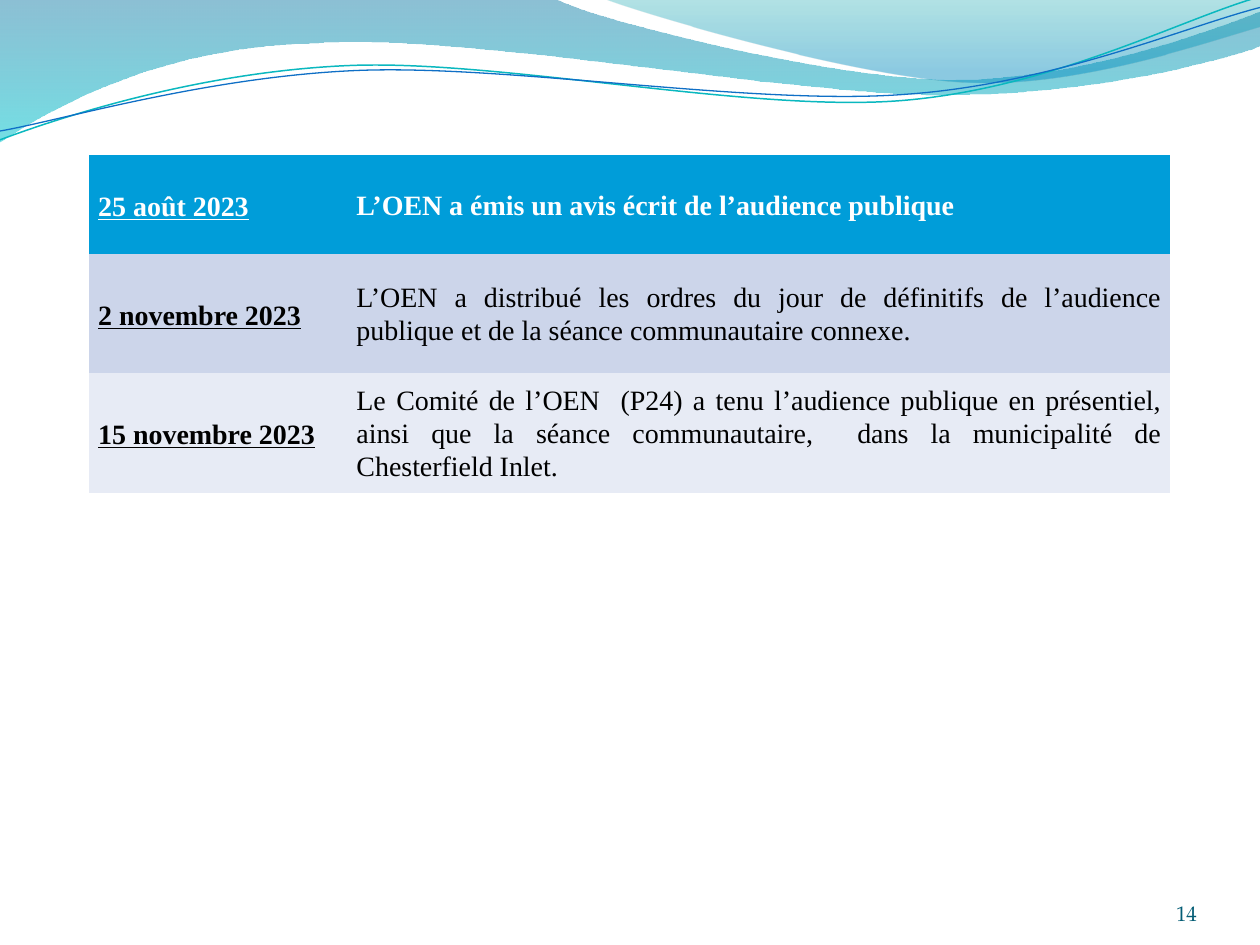
from dataclasses import dataclass
from math import cos, radians, sin

from lxml import etree
from pptx import Presentation
from pptx.dml.color import RGBColor
from pptx.enum.text import MSO_ANCHOR, PP_ALIGN
from pptx.oxml.ns import qn
from pptx.util import Inches, Pt

LEFT, RIGHT, JUSTIFY = PP_ALIGN.LEFT, PP_ALIGN.RIGHT, PP_ALIGN.JUSTIFY
MIDDLE, BOTTOM = MSO_ANCHOR.MIDDLE, MSO_ANCHOR.BOTTOM

WHITE = RGBColor(0xFF, 0xFF, 0xFF)
BLACK = RGBColor(0x00, 0x00, 0x00)
HEADER_BLUE = RGBColor(0x00, 0x9D, 0xD9)
BAND_DARK = RGBColor(0xCC, 0xD5, 0xEA)
BAND_LIGHT = RGBColor(0xE7, 0xEB, 0xF5)
NUMBER_BLUE = RGBColor(0x04, 0x5D, 0x75)
DEEP_BLUE = RGBColor(0x00, 0x74, 0xA1)
CYAN = RGBColor(0x00, 0xC6, 0xCF)
TEAL = RGBColor(0x00, 0xA1, 0xA9)
SKY = RGBColor(0x00, 0x8B, 0xBF)
LINE_TEAL = RGBColor(0x0A, 0xB8, 0xBF)
LINE_BLUE = RGBColor(0x0F, 0x6F, 0xC6)

NO_STYLE = "{2D5ABB26-0587-4C30-8999-92F81FD0307C}"
TILT = -2.7

Point = tuple[float, float]
Segments = list[tuple[Point, ...]]  # one point for a line, three for a cubic curve


@dataclass
class Stop:
    position: float
    color: RGBColor
    opacity: int


@dataclass
class Wave:
    start: Point
    segments: Segments
    stops: tuple[Stop, ...]


@dataclass
class Strand:
    start: Point
    segments: Segments
    center: Point
    color: RGBColor
    width: float


@dataclass
class Event:
    date: str
    text: str
    height: float
    fill: RGBColor
    color: RGBColor
    bold: bool


WAVES = [
    Wave((0, 0), [
        ((4.4, -0.01),),
        ((4.76, 0.17), (6.64, 0.63), (7.58, 0.63)),
        ((8.53, 0.63), (9.58, 0.26), (10, 0.09)),
        ((10.01, 0.36),),
        ((9.83, 0.44), (8.7, 0.76), (7.46, 0.75)),
        ((6.22, 0.75), (3.82, 0.28), (2.57, 0.34)),
        ((1.29, 0.36), (0.46, 0.83), (-0.01, 1.13)),
        ((0, 0),),
    ], (Stop(0, DEEP_BLUE, 45), Stop(1, CYAN, 55))),
    Wave((4.79, -0.01), [
        ((5.09, 0.11), (6.82, 0.62), (7.69, 0.65)),
        ((8.56, 0.69), (9.61, 0.32), (10, 0.21)),
        ((10, 0),),
        ((4.79, -0.01),),
    ], (Stop(0, TEAL, 30), Stop(0.8, SKY, 45))),
]

STRANDS = [
    Strand((0, 1.11), [
        ((0.48, 0.93), (1.58, 0.57), (2.77, 0.52)),
        ((3.95, 0.47), (5.93, 0.89), (7.13, 0.8)),
        ((8.33, 0.71), (9.38, 0.15), (9.98, -0.02)),
    ], (4.99, 0.57), LINE_TEAL, 0.85),
    Strand((0, 1.04), [
        ((0.47, 0.96), (1.64, 0.61), (2.83, 0.56)),
        ((4.03, 0.51), (5.97, 0.84), (7.17, 0.75)),
        ((8.36, 0.67), (9.41, 0.21), (10, 0.06)),
    ], (5, 0.59), LINE_BLUE, 0.75),
]

EVENTS = [
    Event("25 août 2023", "L’OEN a émis un avis écrit de l’audience publique",
          0.79, HEADER_BLUE, WHITE, True),
    Event("2 novembre 2023",
          "L’OEN a distribué les ordres du jour de définitifs de l’audience "
          "publique et de la séance communautaire connexe.",
          0.94, BAND_DARK, BLACK, False),
    Event("15 novembre 2023",
          "Le Comité de l’OEN  (P24) a tenu l’audience publique en présentiel, "
          "ainsi que la séance communautaire,  dans la municipalité de "
          "Chesterfield Inlet.",
          0.95, BAND_LIGHT, BLACK, False),
]


def set_all(target, values: dict) -> None:
    for name, value in values.items():
        setattr(target, name, value)


def turn(point: Point, center: Point, degrees: float) -> Point:
    angle = radians(degrees)
    x, y = point[0] - center[0], point[1] - center[1]
    return (center[0] + x * cos(angle) - y * sin(angle),
            center[1] + x * sin(angle) + y * cos(angle))


def add_outline(page, start: Point, segments: Segments, close: bool):
    builder = page.shapes.build_freeform(Inches(start[0]), Inches(start[1]))
    builder.add_line_segments([(Inches(x), Inches(y)) for segment in segments
                               for x, y in segment], close=close)
    shape = builder.convert_to_shape()
    shape.shadow.inherit = False
    # Join each three points of a curve into one Bezier element
    lines = iter(list(shape._element.spPr.iter(qn("a:lnTo"))))
    for segment in segments:
        parts = [next(lines) for _ in segment]
        if len(parts) == 3:
            curve = etree.Element(qn("a:cubicBezTo"))
            parts[0].addprevious(curve)
            for part in parts:
                curve.append(part[0])
                part.getparent().remove(part)
    return shape


def add_wave(page, wave: Wave) -> None:
    shape = add_outline(page, wave.start, wave.segments, True)
    shape.line.fill.background()
    shape.fill.gradient()
    shape.fill.gradient_angle = 270
    for target, stop in zip(shape.fill.gradient_stops, wave.stops):
        target.position = stop.position
        target.color.rgb = stop.color
    for color, stop in zip(shape._element.spPr.iter(qn("a:srgbClr")), wave.stops):
        etree.SubElement(color, qn("a:alpha"), val=str(stop.opacity * 1000))


def add_strand(page, strand: Strand) -> None:
    level = [tuple(turn(point, strand.center, -TILT) for point in segment)
             for segment in strand.segments]
    shape = add_outline(page, turn(strand.start, strand.center, -TILT), level, False)
    shape.rotation = TILT
    shape.fill.background()
    shape.line.color.rgb = strand.color
    shape.line.width = Pt(strand.width)


def write(para, text: str, layout: dict, font: dict, color: RGBColor) -> None:
    set_all(para, layout)
    span = para.add_run()
    span.text = text
    set_all(span.font, font)
    span.font.color.rgb = color


def add_events(page) -> None:
    frame = page.shapes.add_table(len(EVENTS), 2, Inches(0.71), Inches(1.23),
                                  Inches(8.58), Inches(2.68))
    table = frame.table
    table._tbl.tblPr.find(qn("a:tableStyleId")).text = NO_STYLE
    for column, width in zip(table.columns, (2.05, 6.53)):
        column.width = Inches(width)
    date_layout = {"alignment": LEFT, "line_spacing": 1.15, "space_after": Pt(10)}
    text_layout = {"alignment": JUSTIFY, "line_spacing": 1.06, "space_after": Pt(8)}
    cell_format = {"vertical_anchor": MIDDLE,
                   "margin_left": Inches(0.07), "margin_right": Inches(0.07),
                   "margin_top": 0, "margin_bottom": 0}
    for row, event in zip(table.rows, EVENTS):
        row.height = Inches(event.height)
        contents = ((event.date, date_layout, True, True),
                    (event.text, text_layout, event.bold, False))
        for cell, (text, layout, bold, underline) in zip(row.cells, contents):
            set_all(cell, cell_format)
            cell.fill.solid()
            cell.fill.fore_color.rgb = event.fill
            font = {"name": "Times New Roman", "size": Pt(16),
                    "bold": bold, "underline": underline}
            write(cell.text_frame.paragraphs[0], text, layout, font, event.color)


def add_page_number(page) -> None:
    box = page.shapes.add_textbox(Inches(8.67), Inches(6.95), Inches(0.83), Inches(0.4))
    set_all(box.text_frame, {"word_wrap": True, "vertical_anchor": BOTTOM,
                             "margin_left": 0, "margin_right": 0,
                             "margin_top": 0, "margin_bottom": 0})
    write(box.text_frame.paragraphs[0], "14", {"alignment": RIGHT},
          {"name": "TeX Gyre Pagella", "size": Pt(12)}, NUMBER_BLUE)


def main() -> None:
    deck = Presentation()
    set_all(deck, {"slide_width": Inches(10), "slide_height": Inches(7.5)})
    page = deck.slides.add_slide(deck.slide_layouts[6])
    # Wave banner
    for wave in WAVES:
        add_wave(page, wave)
    for strand in STRANDS:
        add_strand(page, strand)
    # Page number and timeline table
    add_page_number(page)
    add_events(page)
    deck.save("out.pptx")


if __name__ == "__main__":
    main()
